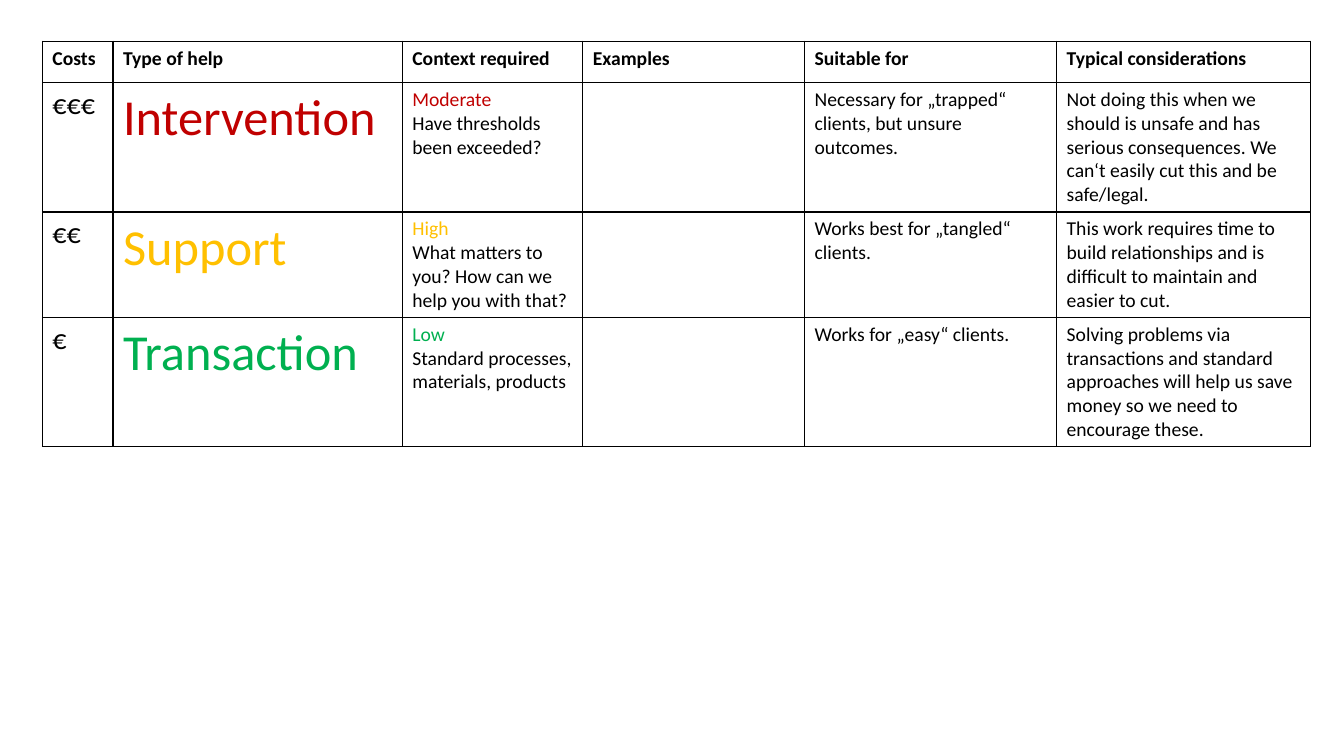
import pptx
import pptx.util
import pptx.dml.color
import pptx.oxml.ns
from lxml import etree

RGBColor = pptx.dml.color.RGBColor
BLACK = RGBColor(0x00, 0x00, 0x00)
RED = RGBColor(0xC0, 0x00, 0x00)
AMBER = RGBColor(0xFF, 0xC0, 0x00)
GREEN = RGBColor(0x00, 0xB0, 0x50)

FONT = "Calibri"
BODY, COST, HELP = 14, 20, 36  # text sizes in points
SLIDE_W, SLIDE_H = 13.33, 7.5
TABLE_BOX = (0.42, 0.41, 12.58, 3.97)
COLUMNS = (0.7, 2.87, 1.79, 2.2, 2.5, 2.52)  # relative widths
MIN_ROW = 0.41  # rows grow to fit their text

HEADERS = ("Costs", "Type of help", "Context required", "Examples",
           "Suitable for", "Typical considerations")
# cost, type of help, colour, context level, context, suitable for, considerations
HELP_TYPES = (
    ("€€€", "Intervention", RED, "Moderate ", "Have thresholds been exceeded?",
     "Necessary for „trapped“ clients, but unsure outcomes.",
     "Not doing this when we should is unsafe and has serious consequences. "
     "We can‘t easily cut this and be safe/legal."),
    ("€€", "Support", AMBER, "High ",
     "What matters to you? How can we help you with that?",
     "Works best for „tangled“ clients.",
     "This work requires time to build relationships and is difficult to "
     "maintain and easier to cut."),
    ("€", "Transaction", GREEN, "Low ", "Standard processes, materials, products",
     "Works for „easy“ clients.",
     "Solving problems via transactions and standard approaches will help us "
     "save money so we need to encourage these."),
)


def add_run(p, text, size=BODY, color=BLACK, bold=False):
    r = p.add_run()
    r.text = text
    r.font.name = FONT
    r.font.size = pptx.util.Pt(size)
    r.font.bold = bold
    r.font.color.rgb = color


def style_cell(cell):
    """Thin black border on every side, no fill."""
    tc_pr = cell._tc.get_or_add_tcPr()
    qn = pptx.oxml.ns.qn
    for side in ("a:lnL", "a:lnR", "a:lnT", "a:lnB"):
        ln = etree.SubElement(tc_pr, qn(side), w=str(pptx.util.Pt(1)))
        fill = etree.SubElement(ln, qn("a:solidFill"))
        etree.SubElement(fill, qn("a:srgbClr"), val=str(BLACK))
    cell.fill.background()


def help_table(s, box):
    left, top, width, height = (pptx.util.Inches(v) for v in box)
    frame = s.shapes.add_table(len(HELP_TYPES) + 1, len(HEADERS),
                               left, top, width, height)
    table = frame.table
    table.first_row = False
    table.horz_banding = False
    for column, share in zip(table.columns, COLUMNS):
        column.width = int(width * share / sum(COLUMNS))
    for row in table.rows:
        row.height = pptx.util.Inches(MIN_ROW)
    frame.height = height
    for cell in table.iter_cells():
        style_cell(cell)

    # Header row
    for i, header in enumerate(HEADERS):
        add_run(table.cell(0, i).text_frame.paragraphs[0], header, bold=True)

    # One row per type of help; the examples column stays empty
    for row, entry in enumerate(HELP_TYPES, start=1):
        cost, name, color, level, context, suitable, considerations = entry
        p = [table.cell(row, i).text_frame.paragraphs[0]
             for i in range(len(HEADERS))]
        add_run(p[0], cost, COST)
        add_run(p[1], name, HELP, color)
        add_run(p[2], level, color=color)
        p[2].add_line_break()
        add_run(p[2], context)
        add_run(p[4], suitable)
        add_run(p[5], considerations)


def main():
    prs = pptx.Presentation()
    prs.slide_width = pptx.util.Inches(SLIDE_W)
    prs.slide_height = pptx.util.Inches(SLIDE_H)
    s = prs.slides.add_slide(prs.slide_layouts[6])
    help_table(s, TABLE_BOX)
    prs.save("out.pptx")


if __name__ == "__main__":
    main()
